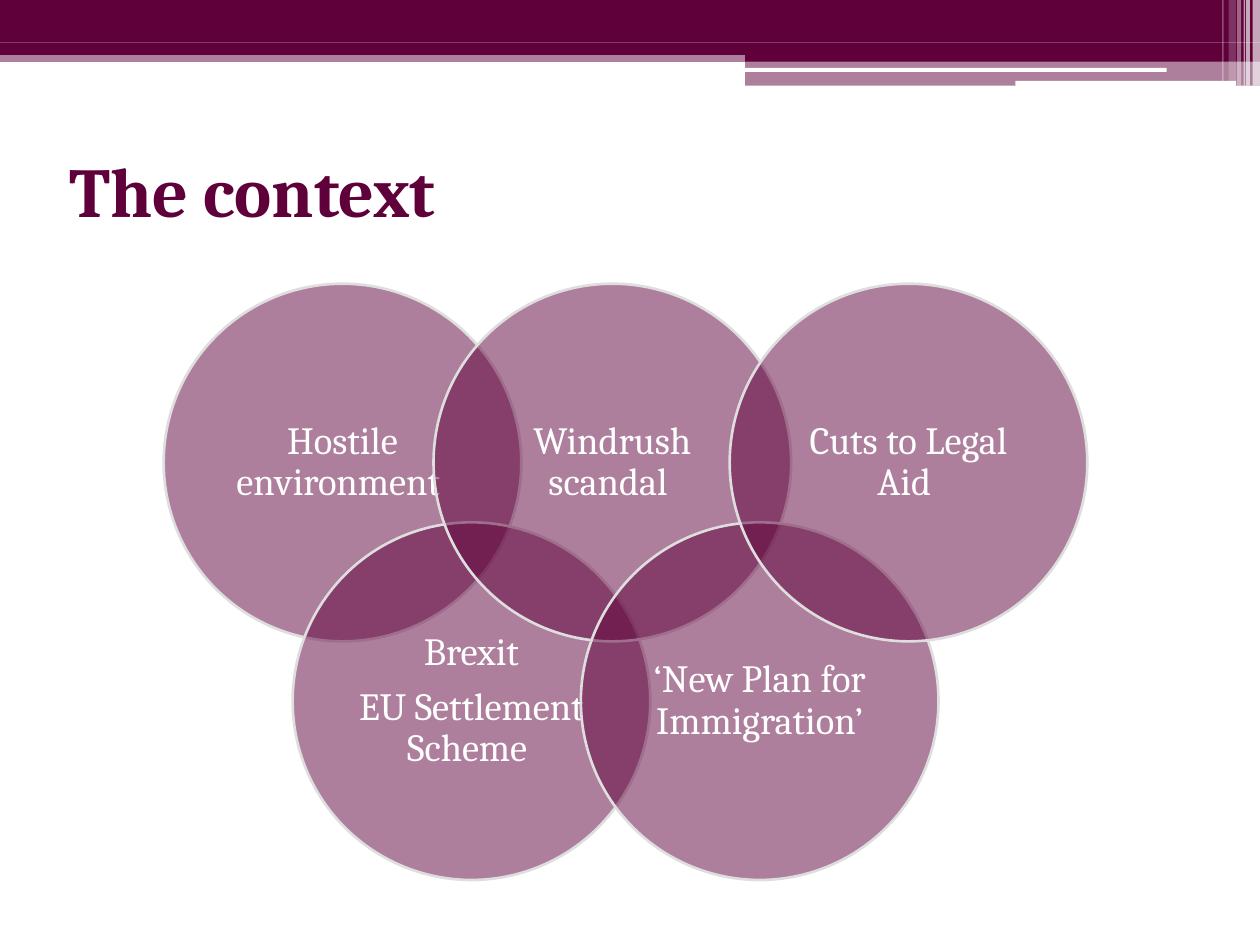
from pptx import Presentation
from pptx.dml.color import RGBColor
from pptx.enum.shapes import MSO_SHAPE as Kind
from pptx.enum.text import MSO_ANCHOR as Anchor, PP_ALIGN as Align
from pptx.oxml.ns import qn
from pptx.util import Cm, Pt
from lxml import etree

PLUM = RGBColor(0x5F, 0x00, 0x3B)
WHITE = RGBColor(0xFF, 0xFF, 0xFF)
GREY = RGBColor(0xDE, 0xDE, 0xDE)

deck = Presentation()
deck.slide_width, deck.slide_height = Cm(25.4), Cm(19.05)
slide = deck.slides.add_slide(deck.slide_layouts[5])


def draw(kind, x, y, w, h, color, alpha=100):
    shape = slide.shapes.add_shape(kind, Cm(x), Cm(y), Cm(w), Cm(h))
    shape.shadow.inherit = False
    shape.line.fill.background()
    shape.fill.solid()
    shape.fill.fore_color.rgb = color
    if alpha < 100:
        tint = shape.fill._xPr.find(".//" + qn("a:srgbClr"))
        etree.SubElement(tint, qn("a:alpha")).set("val", str(alpha * 1000))
    return shape


def write(shape, text, size=22, color=WHITE, bold=False, align=Align.CENTER,
          inset=0.23, space=1.0, after=0):
    frame = shape.text_frame
    frame.word_wrap = True
    frame.vertical_anchor = Anchor.MIDDLE
    frame.margin_left = frame.margin_right = Cm(inset)
    frame.margin_top = frame.margin_bottom = Cm(inset)
    frame.text = text
    for para in frame.paragraphs:
        para.alignment = align
        para.line_spacing = space
        para.space_before, para.space_after = Pt(0), Pt(after)
        for run in para.runs:
            font = run.font
            font.name, font.size, font.bold = "Cambria", Pt(size), bold
            font.color.rgb = color


# Header bands: left, top, width, height, opacity
for x, y, w, h, alpha in [
    (0, 1.02, 25.4, 0.23, 50),
    (0, 0, 25.4, 0.86, 100),
    (0, 0.86, 25.4, 0.25, 100),
    (15.02, 0.99, 10.38, 0.25, 100),
    (15.02, 1.22, 10.38, 0.51, 50),
]:
    draw(Kind.RECTANGLE, x, y, w, h, PLUM, alpha)

# White bars under the header
for x, y, w, h in [(15.01, 1.37, 8.51, 0.08), (20.47, 1.63, 4.45, 0.1)]:
    draw(Kind.ROUNDED_RECTANGLE, x, y, w, h, WHITE)

# Stripes at the right edge: left, width, height, opacity
for x, w, h, alpha in [
    (25.25, 0.15, 1.73, 65),
    (25.12, 0.08, 1.73, 65),
    (25.07, 0.03, 1.73, 60),
    (24.94, 0.08, 1.73, 40),
    (24.77, 0.15, 1.63, 20),
    (24.64, 0.03, 1.63, 30),
]:
    draw(Kind.RECTANGLE, x, 0, w, h, WHITE, alpha)

# Title
title = slide.shapes.title
title.left, title.top = Cm(1.27), Cm(2.34)
title.width, title.height = Cm(22.86), Cm(2.97)
write(title, "The context", size=40, color=PLUM, bold=True,
      align=Align.LEFT, inset=0.13)

# Overlapping circles in two rows, from back to front
SIZE, UPPER, LOWER = 7.21, 5.72, 10.53
for x, y, text in [
    (3.3, UPPER, "Hostile environment "),
    (5.9, LOWER, "Brexit\nEU Settlement Scheme "),
    (8.74, UPPER, "Windrush scandal "),
    (11.71, LOWER, "‘New Plan for Immigration’"),
    (14.71, UPPER, "Cuts to Legal Aid "),
]:
    circle = draw(Kind.OVAL, x, y, SIZE, SIZE, PLUM, 50)
    circle.line.color.rgb = GREY
    circle.line.width = Pt(1.5)
    write(circle, text, space=0.9, after=7.7)

deck.save("out.pptx")
